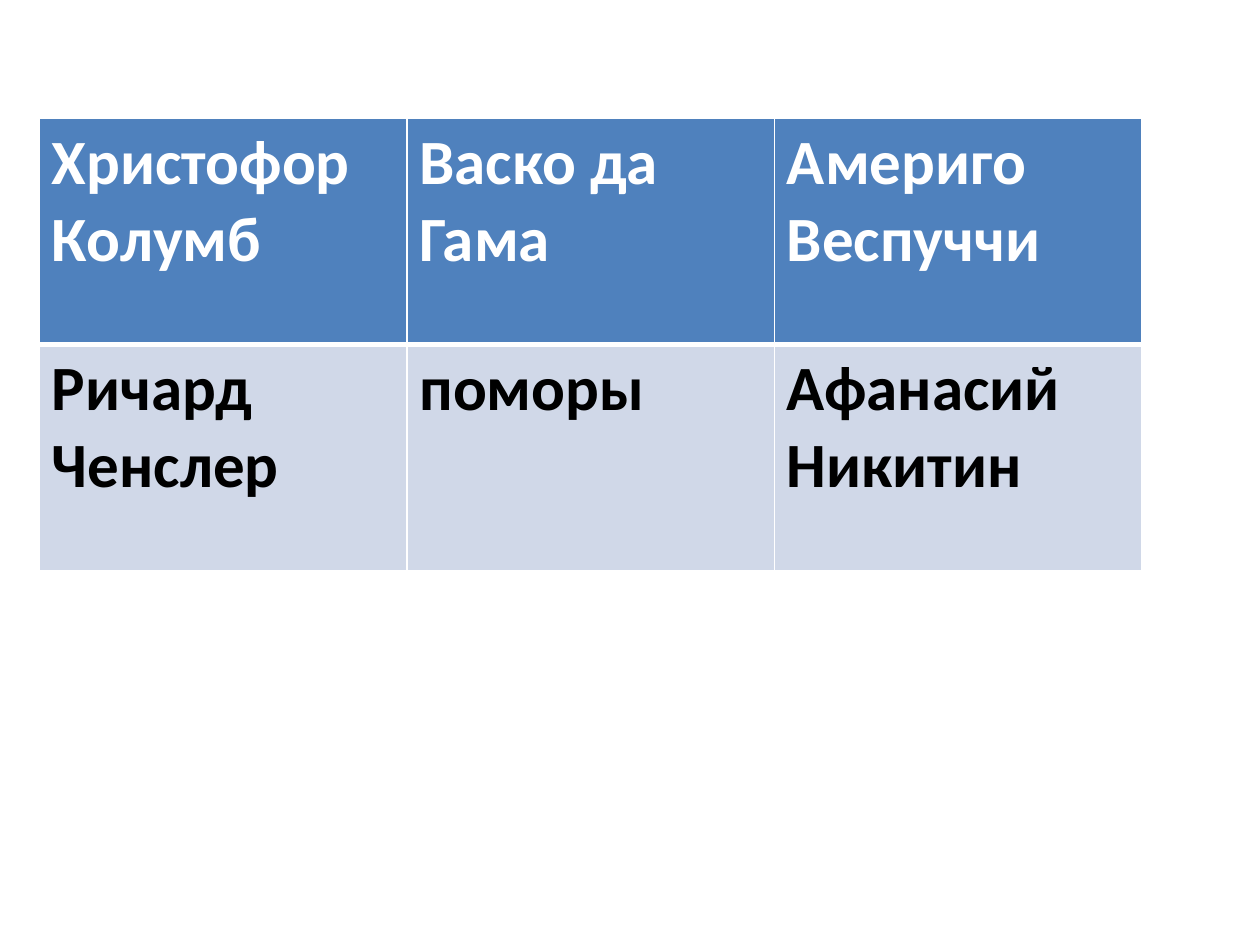
import dataclasses

import pptx
import pptx.dml.color
import pptx.oxml
import pptx.oxml.ns
import pptx.util


@dataclasses.dataclass(frozen=True)
class Theme:
    font: str = "Calibri"
    size: int = 36
    header_fill: str = "4F81BD"
    header_text: str = "FFFFFF"
    body_fill: str = "D0D8E8"
    body_text: str = "000000"
    border: str = "FFFFFF"
    thin: int = 1
    thick: int = 3


class SlideBuilder:
    GRID_COLUMNS, GRID_ROWS = 32, 24

    def __init__(self, presentation, theme):
        self.theme = theme
        self.column = presentation.slide_width / self.GRID_COLUMNS
        self.row = presentation.slide_height / self.GRID_ROWS
        self.slide = presentation.slides.add_slide(presentation.slide_layouts[6])

    def border(self, cell, widths):
        """Draw cell borders; they go before the fill, in the order given."""
        properties = cell._tc.get_or_add_tcPr()
        for index, (side, width) in enumerate(widths.items()):
            line = pptx.oxml.parse_xml(
                f'<a:ln{side} {pptx.oxml.ns.nsdecls("a")} w="{pptx.util.Pt(width)}">'
                f'<a:solidFill><a:srgbClr val="{self.theme.border}"/></a:solidFill>'
                f'</a:ln{side}>')
            properties.insert(index, line)

    def cell(self, cell, text, fill, color, borders):
        cell.text = text
        cell.fill.solid()
        cell.fill.fore_color.rgb = pptx.dml.color.RGBColor.from_string(fill)
        font = cell.text_frame.paragraphs[0].runs[0].font
        formats = {"name": self.theme.font, "bold": True,
                   "size": pptx.util.Pt(self.theme.size)}
        for name, value in formats.items():
            setattr(font, name, value)
        font.color.rgb = pptx.dml.color.RGBColor.from_string(color)
        self.border(cell, borders)

    def table(self, rows, left, top, width, height):
        """Place a table of equal cells, measured in grid columns and rows."""
        theme = self.theme
        table = self.slide.shapes.add_table(
            len(rows), len(rows[0]),
            round(left * self.column), round(top * self.row),
            round(width * self.column), round(height * self.row)).table
        for row_index, texts in enumerate(rows):
            borders = dict.fromkeys("LRTB", theme.thin)
            # The rule under the header is shared by both rows
            if row_index == 0:
                fill, color = theme.header_fill, theme.header_text
                borders["B"] = theme.thick
            else:
                fill, color = theme.body_fill, theme.body_text
                if row_index == 1:
                    borders["T"] = theme.thick
            for column_index, text in enumerate(texts):
                self.cell(table.cell(row_index, column_index),
                          text, fill, color, borders)


def main():
    presentation = pptx.Presentation()
    presentation.slide_width = pptx.util.Inches(10)
    presentation.slide_height = pptx.util.Inches(7.5)

    # Table of explorers
    explorers = [
        ["Христофор Колумб", "Васко да Гама", "Америго Веспуччи"],
        ["Ричард Ченслер", "поморы", "Афанасий Никитин"],
    ]
    builder = SlideBuilder(presentation, Theme())
    builder.table(explorers, left=1, top=3, width=28, height=11.5)

    presentation.save("out.pptx")


if __name__ == "__main__":
    main()
